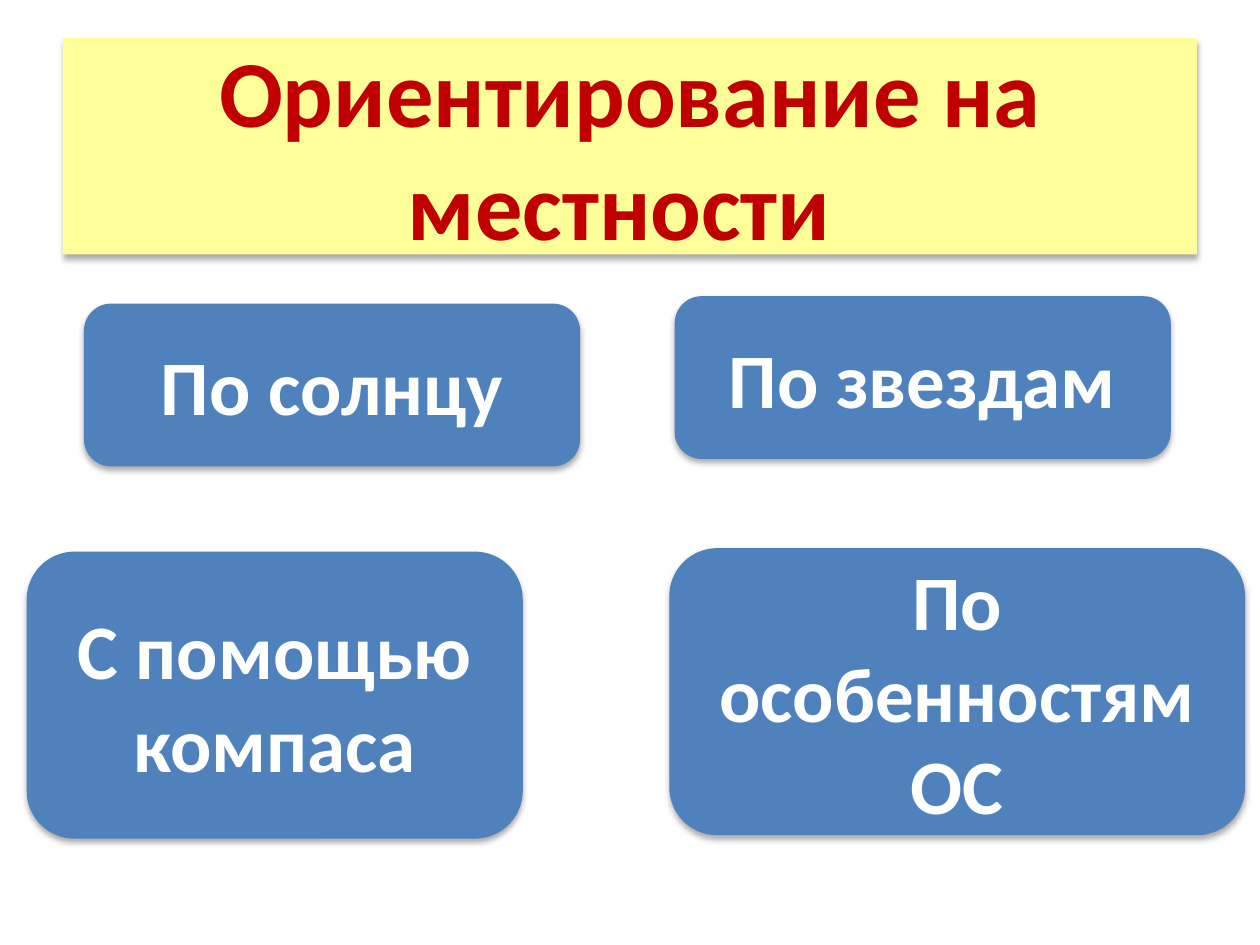
import pptx
import pptx.util
import pptx.dml.color
import pptx.enum.shapes
import pptx.enum.text
import pptx.oxml
import pptx.oxml.ns

Pt = pptx.util.Pt
RGBColor = pptx.dml.color.RGBColor
SHAPE = pptx.enum.shapes.MSO_SHAPE

YELLOW = RGBColor(0xFF, 0xFF, 0x99)
RED = RGBColor(0xC0, 0x00, 0x00)
BLUE = RGBColor(0x4F, 0x81, 0xBD)
WHITE = RGBColor(0xFF, 0xFF, 0xFF)

FONT = "Calibri"
CARD_WIDTH = 283.5
TOP_HEIGHT, BOTTOM_HEIGHT = 93, 164

# Text, left, top, width, height
CARDS = [
    ("По солнцу", 48, 173.5, CARD_WIDTH, TOP_HEIGHT),
    ("С помощью компаса", 15.25, 315.25, CARD_WIDTH, BOTTOM_HEIGHT),
    ("По особенностям ОС", 382.5, 313.25, 329, BOTTOM_HEIGHT),
    ("По звездам", 385.5, 169.25, CARD_WIDTH, TOP_HEIGHT),
]


def add_soft_shadow(box):
    box.shadow.inherit = False
    effects = box._element.spPr.find(pptx.oxml.ns.qn("a:effectLst"))
    effects.append(pptx.oxml.parse_xml(
        f'<a:outerShdw {pptx.oxml.ns.nsdecls("a")} blurRad="{Pt(3.5)}" dist="{Pt(2.2)}"'
        ' dir="5400000" algn="ctr" rotWithShape="0">'
        '<a:srgbClr val="000000"><a:alpha val="32000"/></a:srgbClr></a:outerShdw>'))


def add_panel(page, kind, text, bounds, fill, color, size):
    box = page.shapes.add_shape(kind, *(Pt(length) for length in bounds))
    box.fill.solid()
    box.fill.fore_color.rgb = fill
    box.line.fill.background()
    add_soft_shadow(box)

    # Centred bold label
    frame = box.text_frame
    frame.word_wrap = True
    frame.vertical_anchor = pptx.enum.text.MSO_ANCHOR.MIDDLE
    para = frame.paragraphs[0]
    para.alignment = pptx.enum.text.PP_ALIGN.CENTER
    span = para.add_run()
    span.text = text
    span.font.name = FONT
    span.font.size = Pt(size)
    span.font.bold = True
    span.font.color.rgb = color


def main():
    deck = pptx.Presentation()
    deck.slide_width, deck.slide_height = Pt(720), Pt(540)
    page = deck.slides.add_slide(deck.slide_layouts[6])

    # Title banner
    add_panel(page, SHAPE.RECTANGLE, "Ориентирование на местности ",
              (36, 21.6, 648, 123.75), YELLOW, RED, 54)

    # Ways of finding direction
    for text, *bounds in CARDS:
        add_panel(page, SHAPE.ROUNDED_RECTANGLE, text, bounds, BLUE, WHITE, 44)

    deck.save("out.pptx")


if __name__ == "__main__":
    main()
